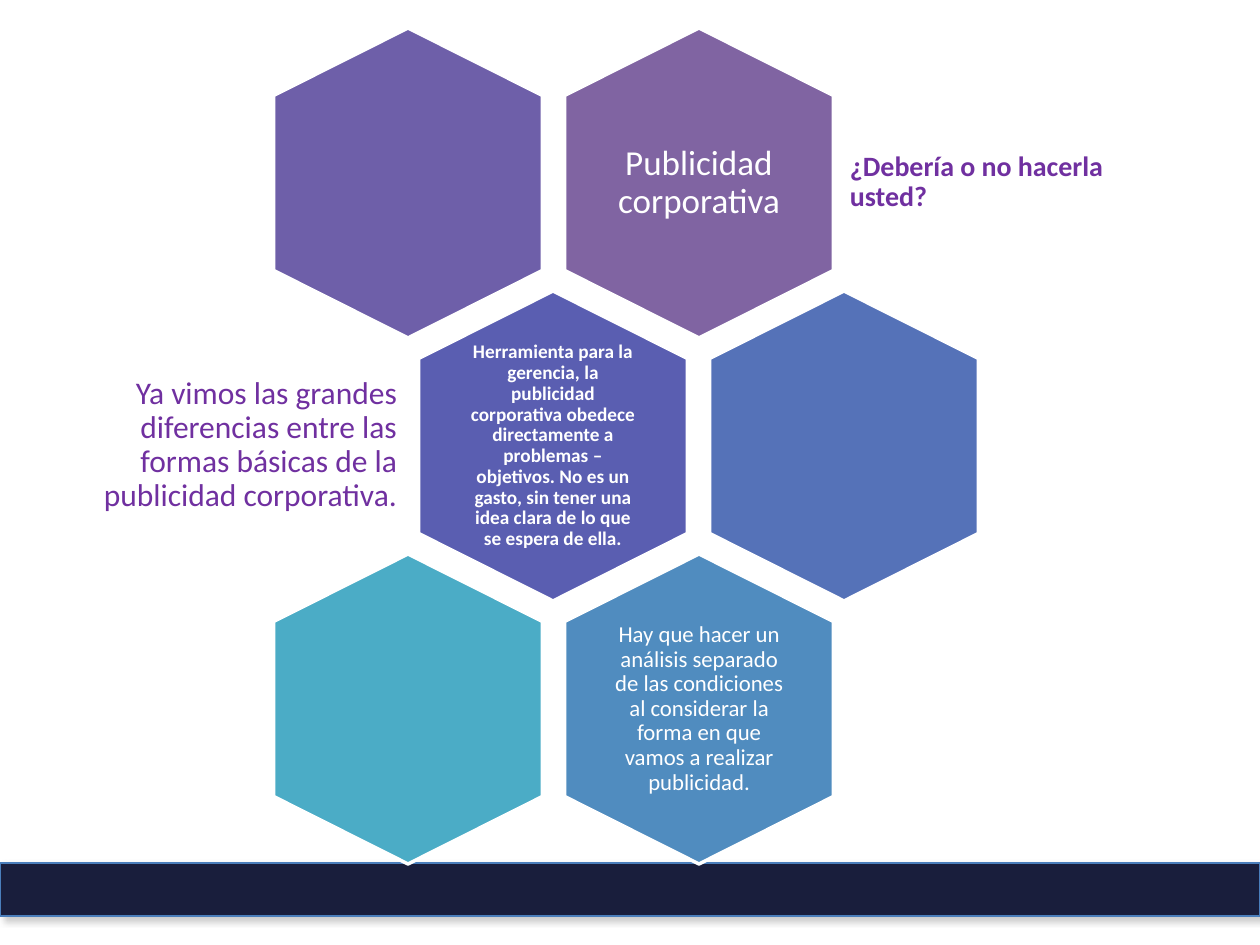
from dataclasses import dataclass

import pptx
import pptx.dml.color
import pptx.enum.shapes
import pptx.enum.text
import pptx.oxml
import pptx.util
from lxml import etree

EMU_PER_PX = 914400 / 126
ALIGN = pptx.enum.text.PP_ALIGN
SHAPES = pptx.enum.shapes.MSO_SHAPE
DRAWING_NS = "http://schemas.openxmlformats.org/drawingml/2006/main"
BAR_SHADOW = f"""
<a:effectLst xmlns:a="{DRAWING_NS}">
  <a:outerShdw blurRad="50800" dist="38100" dir="2700000" algn="tl" rotWithShape="0">
    <a:srgbClr val="808080"><a:alpha val="40000"/></a:srgbClr>
  </a:outerShdw>
</a:effectLst>"""


@dataclass(frozen=True)
class Theme:
    font: str = "Calibri"
    white: str = "FFFFFF"
    accent: str = "7030A0"
    bar: str = "191E3C"
    bar_edge: str = "4A7EBB"
    mauve: str = "8064A2"
    violet: str = "6E5FA9"
    indigo: str = "5A5EB1"
    blue: str = "5572B8"
    sky: str = "508CBF"
    teal: str = "4BACC6"
    title_size: int = 20
    statement_size: int = 18
    question_size: int = 16
    detail_size: int = 13
    small_size: int = 11


def px(length):
    return pptx.util.Emu(round(length * EMU_PER_PX))


def rgb(code):
    return pptx.dml.color.RGBColor.from_string(code)


class Honeycomb:
    """Holds the theme and the slide, and places cells on a staggered grid."""

    LEFT, TOP = 253, 48
    COLUMN_STEP, ROW_STEP, STAGGER = 291, 263, 145
    # Width and height before the quarter turn.
    CELL_W, CELL_H = 310, 270
    TEXT_W, TEXT_H = 185, 213

    def __init__(self, slide, theme):
        self.slide = slide
        self.theme = theme

    def shape(self, kind, box, fill, line, line_width):
        shape = self.slide.shapes.add_shape(kind, *map(px, box))
        shape.shadow.inherit = False
        shape.fill.solid()
        shape.fill.fore_color.rgb = rgb(fill)
        shape.line.color.rgb = rgb(line)
        shape.line.width = pptx.util.Pt(line_width)
        return shape

    def bar(self, box):
        bar = self.shape(SHAPES.RECTANGLE, box, self.theme.bar, self.theme.bar_edge, 0.75)
        properties = bar.element.spPr
        empty_effects = properties.find(f"{{{DRAWING_NS}}}effectLst")
        properties.replace(empty_effects, pptx.oxml.parse_xml(BAR_SHADOW))

    def cell(self, row, column, fill, words="", size=0, bold=False, inset=6):
        left = self.LEFT + column * self.COLUMN_STEP + row % 2 * self.STAGGER
        top = self.TOP + row * self.ROW_STEP
        hexagon = self.shape(SHAPES.HEXAGON, (left, top, self.CELL_W, self.CELL_H),
                             fill, self.theme.white, 2)
        hexagon.rotation = 90
        hexagon.adjustments[0] = 0.25
        hexagon.adjustments[1] = 1.15
        if words:
            box = (left + (self.CELL_W - self.TEXT_W) / 2,
                   top + (self.CELL_H - self.TEXT_H) / 2, self.TEXT_W, self.TEXT_H)
            self.text(box, words, size, self.theme.white, ALIGN.CENTER, bold, inset)

    def text(self, box, words, size, color, align, bold=False, inset=9):
        frame = self.slide.shapes.add_textbox(*map(px, box)).text_frame
        frame.word_wrap = True
        frame.vertical_anchor = pptx.enum.text.MSO_ANCHOR.MIDDLE
        frame.margin_left = frame.margin_right = px(inset)
        frame.margin_top = frame.margin_bottom = px(inset)
        paragraph = frame.paragraphs[0]
        paragraph.alignment = align
        paragraph.line_spacing = 0.9
        run = paragraph.add_run()
        run.text = words
        run.font.name = self.theme.font
        run.font.size = pptx.util.Pt(size)
        run.font.bold = bold
        run.font.color.rgb = rgb(color)


def main():
    deck = pptx.Presentation()
    deck.slide_width, deck.slide_height = px(1260), px(945)
    theme = Theme()
    comb = Honeycomb(deck.slides.add_slide(deck.slide_layouts[6]), theme)

    comb.bar((0, 863, 1260, 53))
    comb.cell(0, 1, theme.mauve, "Publicidad corporativa", theme.title_size, inset=10)
    comb.text((841, 90, 345, 185), "¿Debería o no hacerla usted?",
              theme.question_size, theme.accent, ALIGN.LEFT, bold=True)
    comb.cell(0, 0, theme.violet)
    comb.cell(1, 0, theme.indigo,
              "Herramienta para la gerencia, la publicidad corporativa obedece "
              "directamente a problemas – objetivos. No es un gasto, sin tener una "
              "idea clara de lo que se espera de ella.", theme.small_size, bold=True)
    comb.text((73, 353, 333, 185),
              "Ya vimos las grandes diferencias entre las formas básicas de la "
              "publicidad corporativa.", theme.statement_size, theme.accent, ALIGN.RIGHT)
    comb.cell(1, 1, theme.blue)
    comb.cell(2, 1, theme.sky,
              "Hay que hacer un análisis separado de las condiciones al considerar "
              "la forma en que vamos a realizar publicidad.", theme.detail_size)
    comb.cell(2, 0, theme.teal)

    deck.save("out.pptx")


if __name__ == "__main__":
    main()
